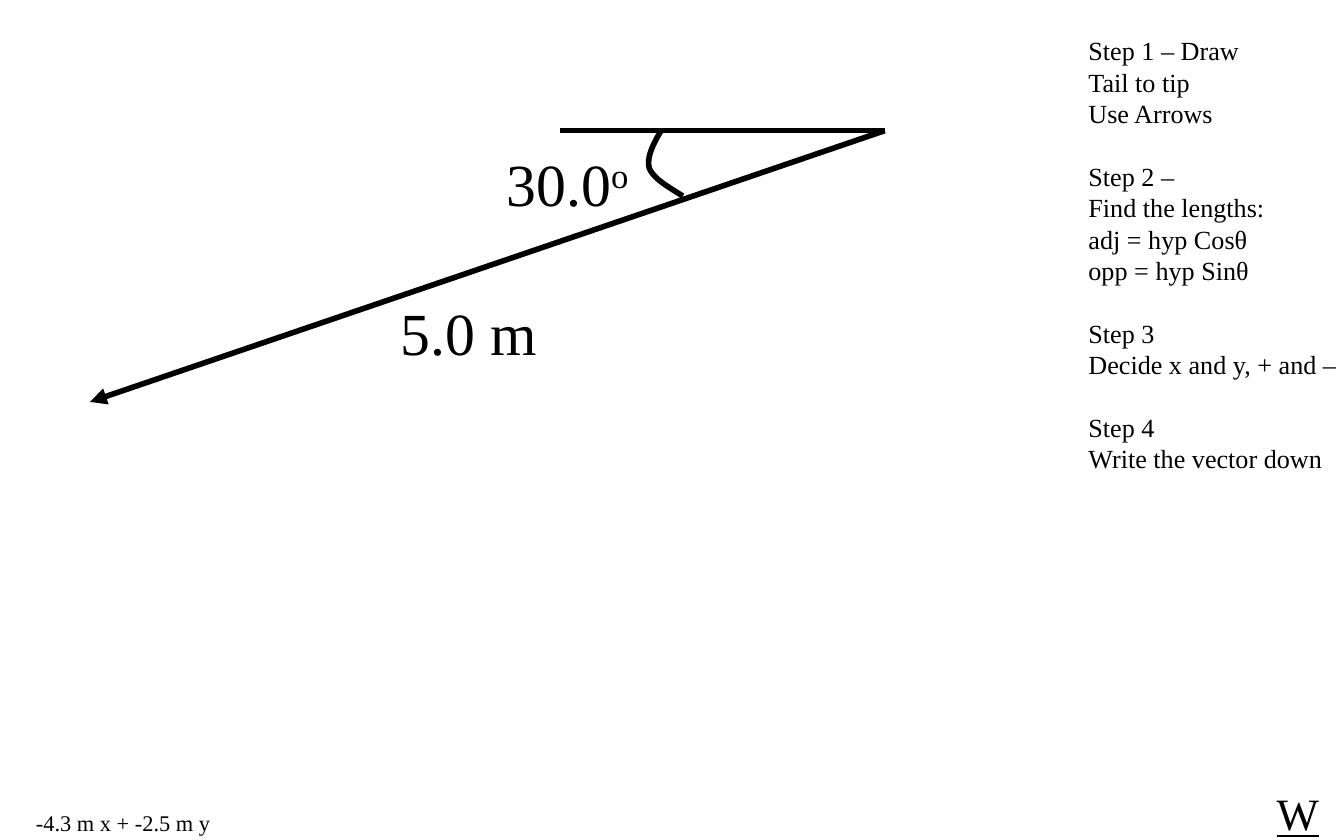
from dataclasses import dataclass

from pptx import Presentation
from pptx.dml.color import RGBColor
from pptx.enum import shapes, text
from pptx.oxml import parse_xml
from pptx.oxml.ns import nsdecls
from pptx.util import Pt


@dataclass(frozen=True)
class Theme:
    font: str = "Times New Roman"
    ink: RGBColor = RGBColor(0, 0, 0)
    line: float = 3
    answer: float = 12
    steps: float = 14
    link: float = 24
    label: float = 32
    step_pitch: float = 16.8


THEME = Theme()
SLIDE_SIZE = (720, 450)

STEPS = [
    ["Step 1 – Draw", "Tail to tip", "Use Arrows"],
    ["Step 2 –", "Find the lengths:", "adj = hyp Cosθ", "opp = hyp Sinθ"],
    ["Step 3", "Decide x and y, + and –"],
    ["Step 4", "Write the vector down"],
]
STEPS_BOX = (576, 15.1, 149.8, 262)

# text, box (left, top, width, height), size
ANSWER = ("-4.3 m x + -2.5 m y", (12.2, 429.8, 109.4, 21.6), THEME.answer)
LINK = ("W", (676.8, 417.6, 37.4, 36), THEME.link)
LENGTH = ("5.0 m", (207.4, 154.8, 87.8, 46), THEME.label)
ANGLE = ("30.0", (264.2, 74.9, 82, 46), THEME.label)

VERTEX = (474, 70)
AXIS_END = (300, 70)
VECTOR_TIP = (48.2, 215.3)
# Cubic curves as start, two controls, end
ANGLE_ARC = [
    ((354.2, 70), (350, 77), (346.3, 84.2), (347.8, 90)),
    ((347.8, 90), (350, 95.8), (357.8, 100), (365.8, 105.1)),
]
ARC_SEGMENTS = 12


def format_run(r, size):
    r.font.name = THEME.font
    r.font.size = Pt(size)
    r.font.color.rgb = THEME.ink


def add_text(slide, content, box, size):
    tf = slide.shapes.add_textbox(*map(Pt, box)).text_frame
    tf.word_wrap = False
    tf.auto_size = text.MSO_AUTO_SIZE.SHAPE_TO_FIT_TEXT
    tf.text = content
    for p in tf.paragraphs:
        for r in p.runs:
            format_run(r, size)
    return tf


def add_steps(slide):
    lines = [line for step in STEPS for line in step]
    tf = add_text(slide, "\n".join(lines), STEPS_BOX, THEME.steps)
    headings = {step[0] for step in STEPS[1:]}
    for p in tf.paragraphs:
        p.line_spacing = Pt(THEME.step_pitch)
        if p.text in headings:
            p.space_before = Pt(THEME.step_pitch)


def format_line(sp):
    sp.line.color.rgb = THEME.ink
    sp.line.width = Pt(THEME.line)


def add_line(slide, start, end, arrow=False):
    sp = slide.shapes.add_connector(
        shapes.MSO_CONNECTOR.STRAIGHT, *map(Pt, start + end))
    format_line(sp)
    if arrow:
        sp.line._get_or_add_ln().append(
            parse_xml(f'<a:tailEnd {nsdecls("a")} type="triangle"/>'))
    sp._element.spPr.append(parse_xml(f'<a:effectLst {nsdecls("a")}/>'))


def cubic_point(curve, t):
    weights = ((1 - t) ** 3, 3 * t * (1 - t) ** 2, 3 * t ** 2 * (1 - t), t ** 3)
    return tuple(Pt(sum(w * v for w, v in zip(weights, values)))
                 for values in zip(*curve))


def add_angle_arc(slide):
    points = [cubic_point(curve, i / ARC_SEGMENTS)
              for curve in ANGLE_ARC for i in range(1, ARC_SEGMENTS + 1)]
    builder = slide.shapes.build_freeform(*map(Pt, ANGLE_ARC[0][0]))
    builder.add_line_segments(points, close=False)
    sp = builder.convert_to_shape()
    sp.fill.background()
    sp.shadow.inherit = False
    format_line(sp)


def main():
    prs = Presentation()
    prs.slide_width, prs.slide_height = map(Pt, SLIDE_SIZE)
    slide = prs.slides.add_slide(prs.slide_layouts[6])

    add_text(slide, *ANSWER)
    link = add_text(slide, *LINK)
    link.paragraphs[0].runs[0].font.underline = True

    add_line(slide, AXIS_END, VERTEX)
    add_line(slide, VERTEX, VECTOR_TIP, arrow=True)
    add_angle_arc(slide)

    add_text(slide, *LENGTH)
    angle = add_text(slide, *ANGLE)
    degree = angle.paragraphs[0].add_run()
    degree.text = "o"
    format_run(degree, THEME.label)
    degree.font._element.set("baseline", "30000")

    add_steps(slide)
    prs.save("out.pptx")


if __name__ == "__main__":
    main()
